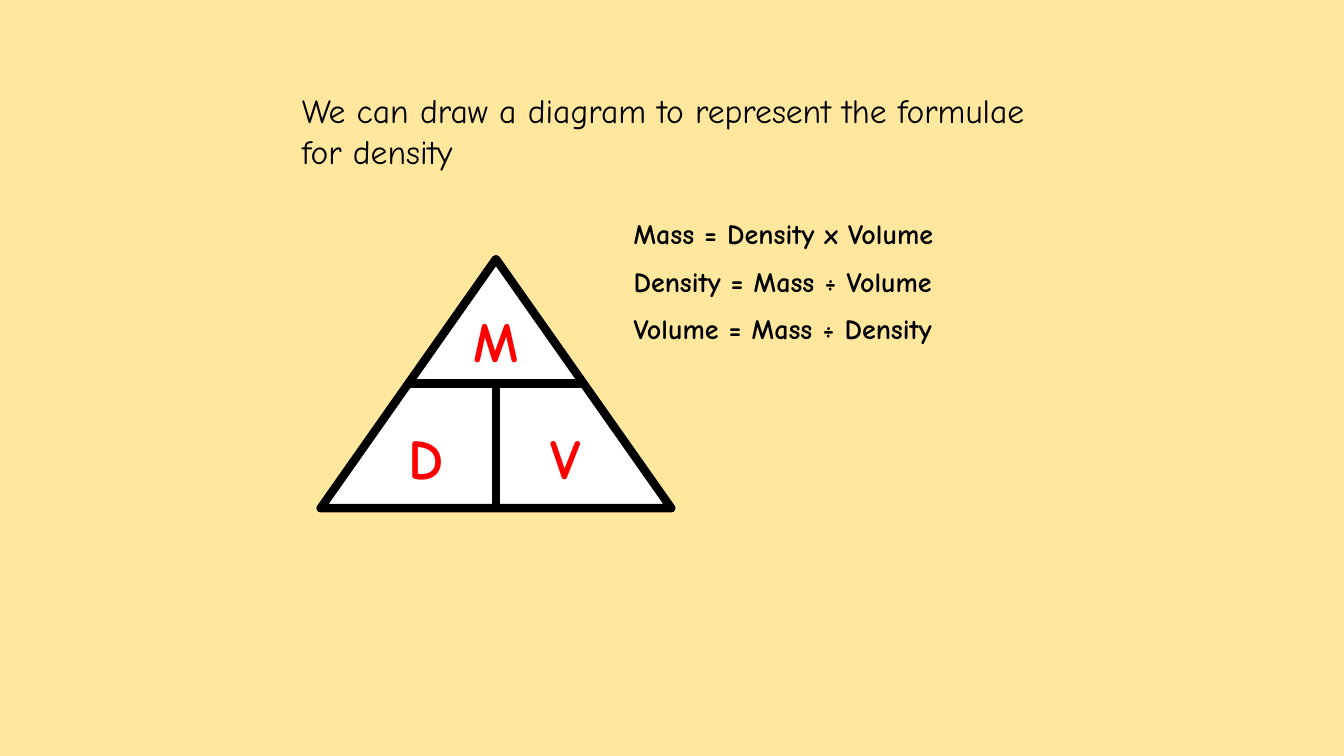
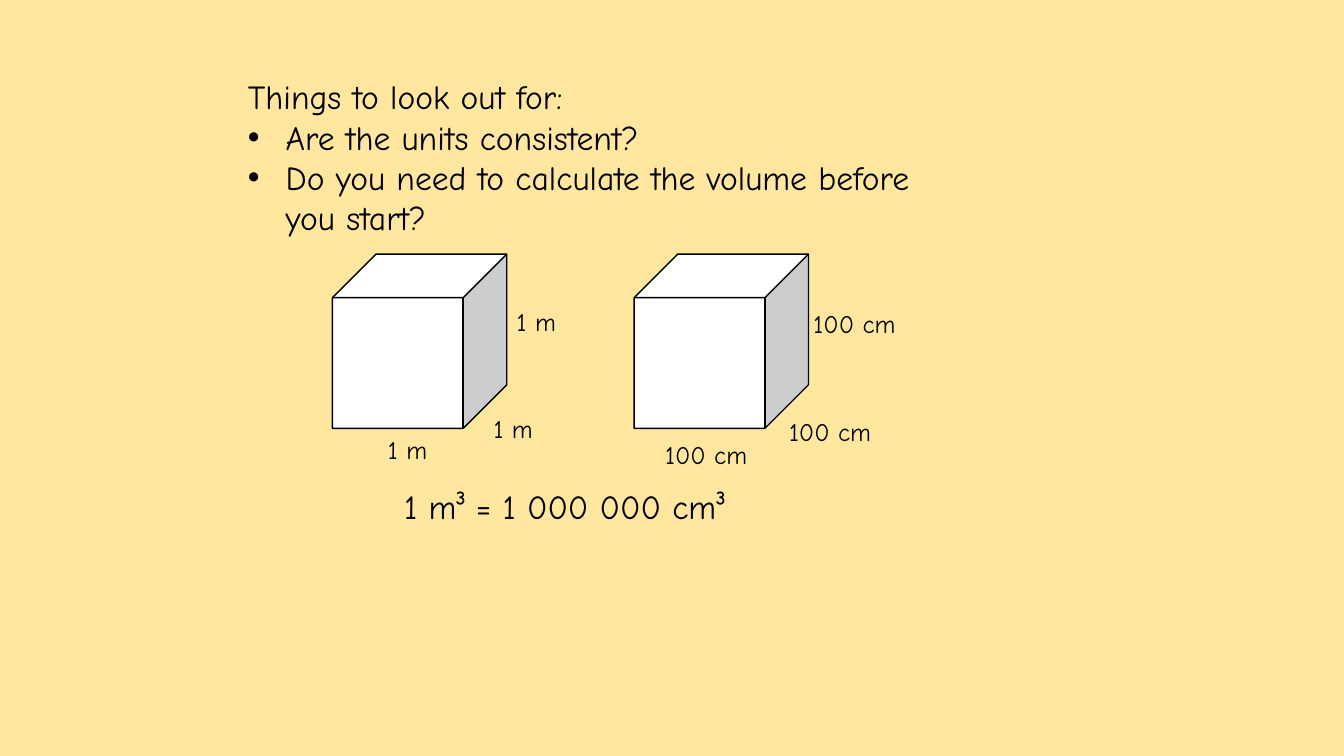
from lxml.etree import SubElement
from pptx import Presentation
from pptx.dml.color import RGBColor
from pptx.enum.shapes import MSO_CONNECTOR, MSO_SHAPE
from pptx.enum.text import MSO_AUTO_SIZE, PP_ALIGN
from pptx.oxml.ns import qn
from pptx.util import Pt

HUES = {"back": "FFE79E", "ink": "000000", "face": "FFFFFF", "key": "FF0000"}
FONT = "Comic Neue"


def hue(name):
    return RGBColor.from_string(HUES[name])


def style(item, **form):
    for name, value in form.items():
        setattr(item, name, value)


def new_slide(deck):
    slide = deck.slides.add_slide(deck.slide_layouts[6])
    fill = slide.background.fill
    fill.solid()
    fill.fore_color.rgb = hue("back")
    return slide


def bullet(para):
    props = para._p.get_or_add_pPr()
    for name, value in {"marL": Pt(27), "indent": -Pt(27)}.items():
        props.set(name, str(value))
    SubElement(props, qn("a:buFont")).set("typeface", "Arial")
    SubElement(props, qn("a:buChar")).set("char", "•")


def add_text(slide, box, lines, size=24, color="ink", bold=False,
             wrap=True, gap=0, align=PP_ALIGN.LEFT, dots=False):
    frame = slide.shapes.add_textbox(*map(Pt, box)).text_frame
    style(frame, word_wrap=wrap, auto_size=MSO_AUTO_SIZE.SHAPE_TO_FIT_TEXT)
    for i, line in enumerate(lines):
        para = frame.paragraphs[0] if i == 0 else frame.add_paragraph()
        if dots and i:
            bullet(para)
        para.alignment = align
        if gap and i:
            para.space_before = Pt(gap)
        run = para.add_run()
        run.text = line
        style(run.font, name=FONT, size=Pt(size), bold=bold)
        run.font.color.rgb = hue(color)


def add_solid(slide, kind, box, width):
    shape = slide.shapes.add_shape(kind, *map(Pt, box))
    shape.shadow.inherit = False
    shape.fill.solid()
    shape.fill.fore_color.rgb = hue("face")
    shape.line.color.rgb = hue("ink")
    shape.line.width = Pt(width)


def add_line(slide, ends, width):
    line = slide.shapes.add_connector(MSO_CONNECTOR.STRAIGHT, *map(Pt, ends))
    line.line.color.rgb = hue("ink")
    line.line.width = Pt(width)
    SubElement(line._element.spPr, qn("a:effectLst"))


# Triangle split into one upper and two lower cells
def draw_triangle(slide, x, y, w, h):
    add_solid(slide, MSO_SHAPE.ISOSCELES_TRIANGLE, (x, y, w, h), 6)
    mid, half = x + w / 2, y + h / 2
    add_line(slide, (x + w / 4, half, x + w * 3 / 4, half), 6)
    add_line(slide, (mid, y + h, mid, half), 6)
    for mark, dx, dy in (("M", 0, 30), ("D", -50, 114), ("V", 50, 114)):
        add_text(slide, (mid + dx - 25.5, y + dy, 51, 56), [mark], 40.3,
                 "key", True, align=PP_ALIGN.CENTER)


# Cube with a label for its height, depth and width
def draw_cube(slide, x, y, side, label, room, spots):
    add_solid(slide, MSO_SHAPE.CUBE, (x, y, side, side), 1)
    for dx, dy in spots:
        add_text(slide, (x + dx, y + dy, room, 29), [label], 18, wrap=False)


def formula_slide(deck):
    slide = new_slide(deck)
    add_text(slide, (208.5, 61, 541.5, 65.5),
             ["We can draw a diagram to represent the formulae for density"])
    draw_triangle(slide, 229, 185, 250.5, 178)
    add_text(slide, (445.5, 151, 265.5, 104.5),
             ["Mass = Density x Volume", "Density = Mass ÷ Volume",
              "Volume = Mass ÷ Density"], 20, bold=True, gap=10)


def units_slide(deck):
    slide = new_slide(deck)
    add_text(slide, (170, 51, 504.5, 124),
             ["Things to look out for:", "Are the units consistent?",
              "Do you need to calculate the volume before you start?"],
             dots=True)
    cubes = (
        (237.5, "1 m", 42.5, ((124.5, 34), (108, 110), (32.5, 125))),
        (453, "100 cm", 74, ((121, 35), (103.5, 112), (15, 129))),
    )
    for x, label, room, spots in cubes:
        draw_cube(slide, x, 181.5, 124.5, label, room, spots)
    add_text(slide, (281.5, 343.5, 262, 36), ["1 m³ = 1 000 000 cm³"],
             wrap=False)


def main():
    deck = Presentation()
    style(deck, slide_width=Pt(960), slide_height=Pt(540))
    formula_slide(deck)
    units_slide(deck)
    deck.save("out.pptx")


if __name__ == "__main__":
    main()
